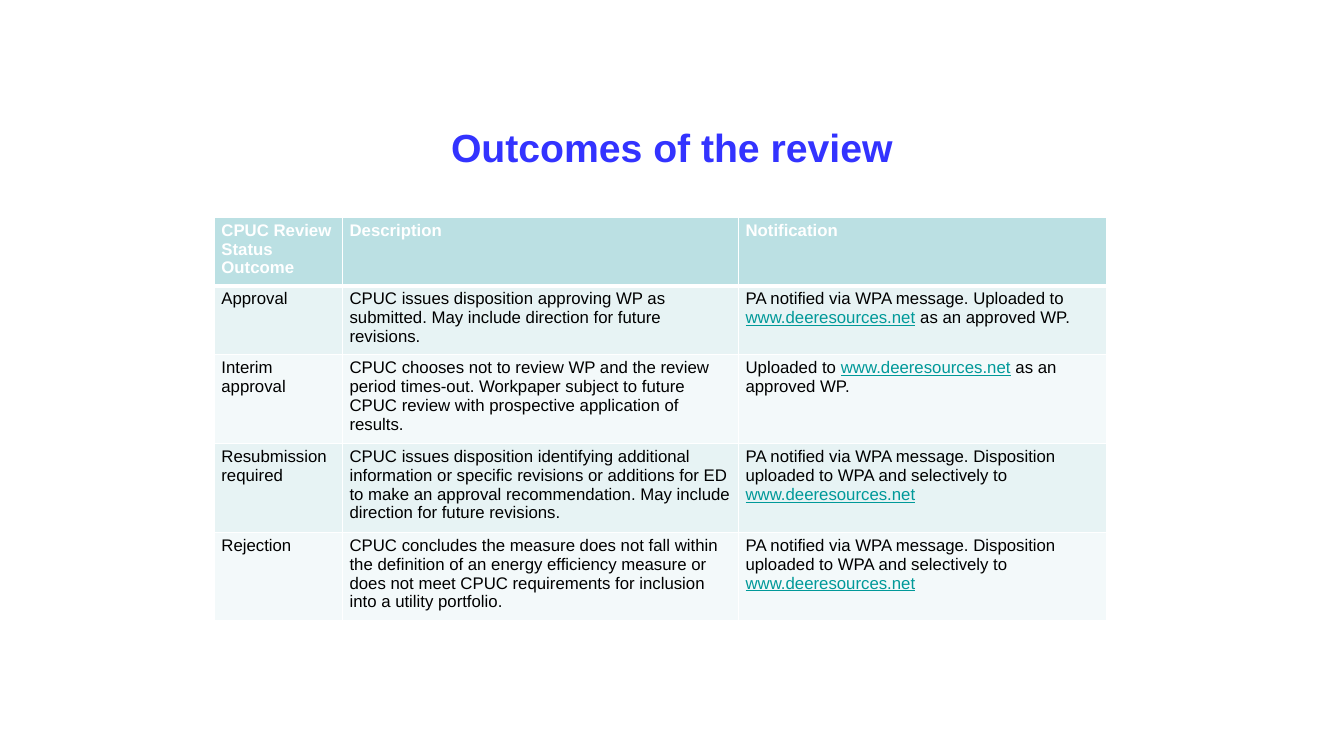
from lxml import etree
from pptx import Presentation
from pptx.dml.color import RGBColor
from pptx.enum.text import MSO_ANCHOR, PP_ALIGN
from pptx.oxml.ns import qn
from pptx.util import Cm, Pt

MIDDLE, TOP = MSO_ANCHOR.MIDDLE, MSO_ANCHOR.TOP
CENTER, LEFT = PP_ALIGN.CENTER, PP_ALIGN.LEFT
TITLE_ONLY = 5

COLORS = {
    "title": "3333FF",
    "head": "BBE0E3",
    "odd": "E7F3F4",
    "even": "F3F9FA",
    "white": "FFFFFF",
    "text": "000000",
    "link": "009999",
}
SITE = "www.deeresources.net"
SENT = "PA notified via WPA message. "
SELECT = SENT + "Disposition uploaded to WPA and selectively to " + SITE
HEADS = ["CPUC Review Status Outcome", "Description", "Notification"]
ROWS = [
    ["Approval",
     "CPUC issues disposition approving WP as submitted. May include "
     "direction for future revisions.",
     SENT + f"Uploaded to {SITE} as an approved WP."],
    ["Interim approval",
     "CPUC chooses not to review WP and the review period times-out. "
     "Workpaper subject to future CPUC review with prospective application "
     "of results.",
     f"Uploaded to {SITE} as an approved WP."],
    ["Resubmission required",
     "CPUC issues disposition identifying additional information or specific "
     "revisions or additions for ED to make an approval recommendation. "
     "May include direction for future revisions.",
     SELECT],
    ["Rejection",
     "CPUC concludes the measure does not fall within the definition of an "
     "energy efficiency measure or does not meet CPUC requirements for "
     "inclusion into a utility portfolio.",
     SELECT],
]
WIDTHS = [3.23, 9.98, 9.27]
HEIGHTS = [1.73, 1.73, 2.24, 2.24, 2.24]


def rgb(name):
    return RGBColor.from_string(COLORS[name])


def write(frame, text, size=12, color="text", bold=False, align=LEFT):
    """Fill the frame with text, showing the site address as a link."""
    para = frame.paragraphs[0]
    para.alignment = align
    before, site, after = text.partition(SITE)
    for part in filter(None, (before, site, after)):
        run = para.add_run()
        run.text = part
        font = run.font
        font.name, font.size, font.bold = "Arial", Pt(size), bold
        font.underline = part == SITE
        font.color.rgb = rgb("link" if part == SITE else color)


def edge(cell, side, width):
    props = cell._tc.get_or_add_tcPr()
    line = etree.SubElement(props, qn(f"a:ln{side}"), w=str(Pt(width)))
    fill = etree.SubElement(line, qn("a:solidFill"))
    etree.SubElement(fill, qn("a:srgbClr"), val=COLORS["white"])


def add_title(slide, left, top, width, height):
    title = slide.shapes.title
    title.left, title.top = Cm(left), Cm(top)
    title.width, title.height = Cm(width), Cm(height)
    title.text_frame.vertical_anchor = MIDDLE
    write(title.text_frame, "Outcomes of the review", size=28,
          color="title", bold=True, align=CENTER)


def style_cell(cell, text, row):
    head = row == 0
    for side in "LRTB":
        thick = (head and side == "B") or (row == 1 and side == "T")
        edge(cell, side, 3 if thick else 1)
    cell.fill.solid()
    cell.fill.fore_color.rgb = rgb(
        "head" if head else "odd" if row % 2 else "even")
    cell.margin_left = cell.margin_right = Cm(0.18)
    cell.margin_top = cell.margin_bottom = Cm(0.1)
    cell.vertical_anchor = TOP
    write(cell.text_frame, text, color="white" if head else "text", bold=head)


def add_outcomes(slide, left, top):
    rows = [HEADS] + ROWS
    table = slide.shapes.add_table(
        len(rows), len(HEADS), Cm(left), Cm(top),
        Cm(sum(WIDTHS)), Cm(sum(HEIGHTS))).table
    for col, width in zip(table.columns, WIDTHS):
        col.width = Cm(width)
    for row, height in zip(table.rows, HEIGHTS):
        row.height = Cm(height)
    for r, texts in enumerate(rows):
        for c, text in enumerate(texts):
            style_cell(table.cell(r, c), text, r)


def main():
    deck = Presentation()
    deck.slide_width, deck.slide_height = Cm(33.87), Cm(19.05)
    slide = deck.slides.add_slide(deck.slide_layouts[TITLE_ONLY])
    add_title(slide, 1.69, 2.34, 30.48, 2.74)
    add_outcomes(slide, 5.4, 5.47)
    deck.save("out.pptx")


if __name__ == "__main__":
    main()
